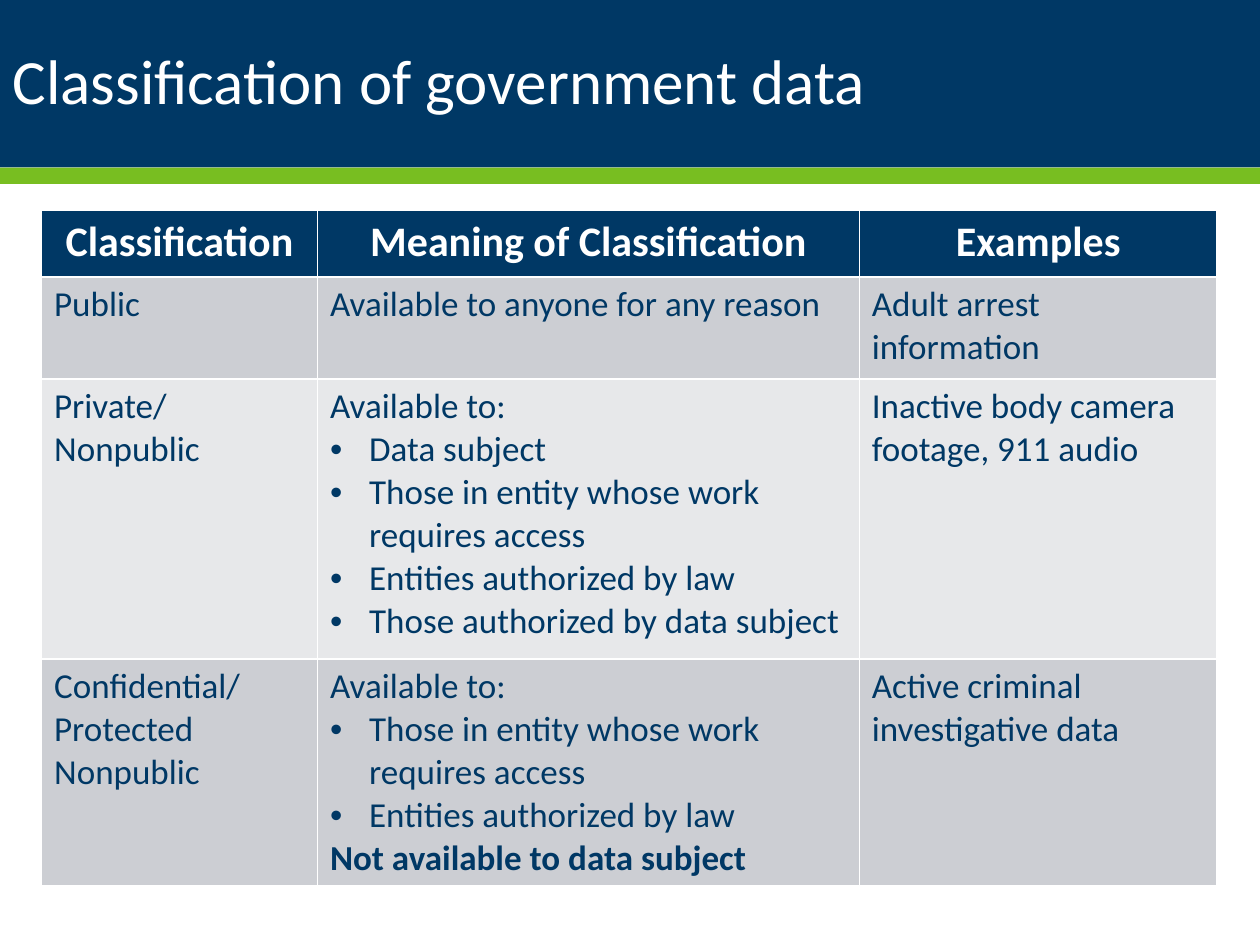
from lxml.etree import SubElement
from pptx import Presentation
from pptx.dml.color import RGBColor
from pptx.enum.shapes import MSO_SHAPE as Shape
from pptx.enum.text import MSO_ANCHOR as Anchor, MSO_AUTO_SIZE as AutoSize, PP_ALIGN as Align
from pptx.oxml.ns import qn
from pptx.util import Inches, Pt

NAVY = RGBColor(0x00, 0x38, 0x65)
GREEN = RGBColor(0x78, 0xBE, 0x21)
WHITE = RGBColor(0xFF, 0xFF, 0xFF)
GRAY = RGBColor(0xCC, 0xCE, 0xD3)
LIGHT_GRAY = RGBColor(0xE7, 0xE8, 0xEA)
FONT = "Calibri"
BULLET = "• "  # marks a bulleted line in the table content
STRONG = "Not available to data subject"

COLUMN_WIDTHS = [2.19, 4.3, 2.84]
ROW_HEIGHTS = [0.53, 0.81, 2.22, 1.69]
ROWS = [
    ["Classification", "Meaning of Classification", "Examples"],
    ["Public", "Available to anyone for any reason", "Adult arrest information"],
    ["Private/\nNonpublic",
     "Available to:\n• Data subject\n• Those in entity whose work requires access\n"
     "• Entities authorized by law\n• Those authorized by data subject",
     "Inactive body camera footage, 911 audio"],
    ["Confidential/\nProtected Nonpublic",
     "Available to:\n• Those in entity whose work requires access\n"
     f"• Entities authorized by law\n{STRONG}",
     "Active criminal investigative data"],
]


def style_font(font, size, color, bold=False):
    font.name = FONT
    font.size = Pt(size)
    font.bold = bold
    font.color.rgb = color


def add_band(slide, top, height, color):
    """Add a full-width band behind the title."""
    band = slide.shapes.add_shape(
        Shape.RECTANGLE, 0, Inches(top), Inches(10), Inches(height))
    band.shadow.inherit = False
    band.fill.solid()
    band.fill.fore_color.rgb = color
    band.line.fill.background()
    slide.shapes.title.element.addprevious(band.element)


def set_title(slide, text):
    title = slide.shapes.title
    title.left, title.top = 0, 0
    title.width, title.height = Inches(10), Inches(1.34)
    frame = title.text_frame
    frame.text = text
    frame.auto_size = AutoSize.NONE
    frame.vertical_anchor = Anchor.MIDDLE
    paragraph = frame.paragraphs[0]
    paragraph.alignment = Align.LEFT
    paragraph.line_spacing = 0.9
    style_font(paragraph.font, 36, WHITE)


def add_bullet(paragraph):
    properties = paragraph._p.get_or_add_pPr()
    properties.set("marL", str(Inches(0.31)))
    properties.set("indent", str(-Inches(0.31)))
    SubElement(properties, qn("a:buFont")).set("typeface", "Arial")
    SubElement(properties, qn("a:buChar")).set("char", BULLET.strip())


def fill_cell(cell, text, fill, is_header):
    cell.fill.solid()
    cell.fill.fore_color.rgb = fill
    lines = text.split("\n")
    cell.text = "\n".join(line.removeprefix(BULLET) for line in lines)
    for line, paragraph in zip(lines, cell.text_frame.paragraphs):
        if is_header:
            paragraph.alignment = Align.CENTER
            style_font(paragraph.font, 24, WHITE, bold=True)
        else:
            style_font(paragraph.font, 20, NAVY, bold=line == STRONG)
        if line.startswith(BULLET):
            add_bullet(paragraph)


def add_classification_table(slide):
    # The default table style supplies the white cell borders
    table = slide.shapes.add_table(
        len(ROWS), len(COLUMN_WIDTHS), Inches(0.33), Inches(1.67),
        Inches(sum(COLUMN_WIDTHS)), Inches(sum(ROW_HEIGHTS))).table
    for column, width in zip(table.columns, COLUMN_WIDTHS):
        column.width = Inches(width)
    for index, (row, height, texts) in enumerate(zip(table.rows, ROW_HEIGHTS, ROWS)):
        row.height = Inches(height)
        is_header = index == 0
        fill = NAVY if is_header else GRAY if index % 2 else LIGHT_GRAY
        for cell, text in zip(row.cells, texts):
            fill_cell(cell, text, fill, is_header)


def main():
    presentation = Presentation()
    presentation.slide_width = Inches(10)
    presentation.slide_height = Inches(7.5)
    slide = presentation.slides.add_slide(presentation.slide_layouts[5])

    # Header
    add_band(slide, 0, 1.33, NAVY)
    add_band(slide, 1.33, 0.13, GREEN)
    set_title(slide, "Classification of government data")

    # Content
    add_classification_table(slide)
    presentation.save("out.pptx")


if __name__ == "__main__":
    main()
